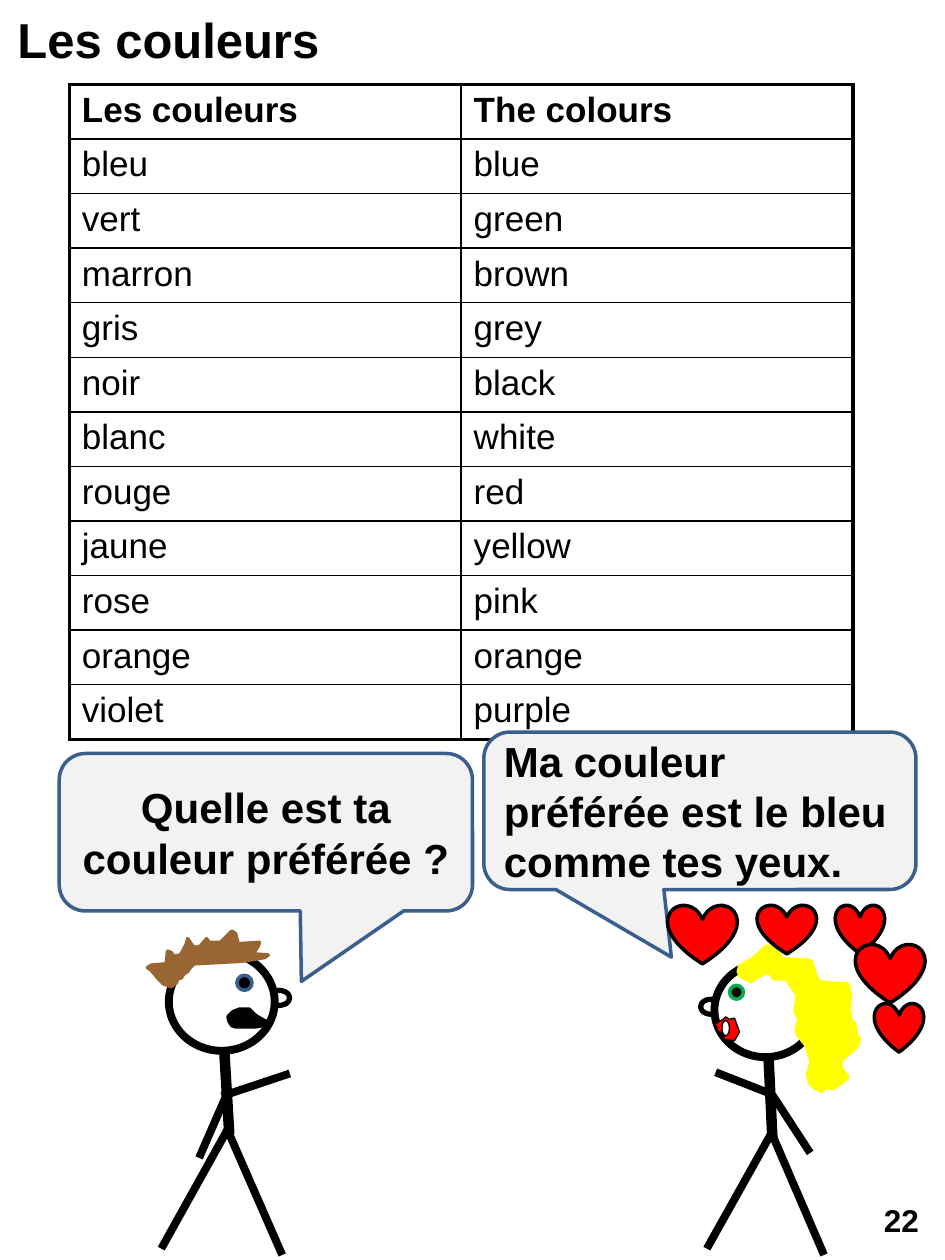
from lxml import etree
from pptx import Presentation
from pptx.dml.color import RGBColor
from pptx.enum.shapes import MSO_CONNECTOR, MSO_SHAPE
from pptx.enum.text import MSO_ANCHOR, PP_ALIGN
from pptx.oxml.ns import qn
from pptx.util import Pt

PX = 9144  # EMU in one px, 100 px to the inch
STRAIGHT = MSO_CONNECTOR.STRAIGHT
ELLIPSE = MSO_SHAPE.OVAL
HEART = MSO_SHAPE.HEART
CALLOUT = MSO_SHAPE.ROUNDED_RECTANGULAR_CALLOUT
ROUNDED = MSO_SHAPE.ROUNDED_RECTANGLE
LEFT, CENTER = PP_ALIGN.LEFT, PP_ALIGN.CENTER
TOP, MIDDLE = MSO_ANCHOR.TOP, MSO_ANCHOR.MIDDLE

COLORS = {
    "black": "000000", "white": "FFFFFF", "red": "FF0000", "yellow": "FFFF00",
    "brown": "996633", "green": "00B050", "blue": "3A5F8C", "bubble": "F2F2F2",
}


class SlideBuilder:
    font_format = {"name": "Arial", "bold": True}

    def __init__(self, slide):
        self.slide = slide
        self.shapes = slide.shapes

    def color(self, name):
        return RGBColor.from_string(COLORS[name])

    def paint(self, shape, fill=None, line=None, width=2):
        shape.shadow.inherit = False
        if fill:
            shape.fill.solid()
            shape.fill.fore_color.rgb = self.color(fill)
        else:
            shape.fill.background()
        if line:
            shape.line.color.rgb = self.color(line)
            shape.line.width = Pt(width)
        else:
            shape.line.fill.background()
        return shape

    def set_text(self, frame, text, size, align=LEFT, **changes):
        paragraph = frame.paragraphs[0]
        paragraph.alignment = align
        run = paragraph.add_run()
        run.text = text
        for name, value in {**self.font_format, "size": Pt(size), **changes}.items():
            setattr(run.font, name, value)
        run.font.color.rgb = self.color("black")

    def text(self, box, text, size):
        frame = self.shapes.add_textbox(*(n * PX for n in box)).text_frame
        frame.word_wrap = True
        self.set_text(frame, text, size)

    def shape(self, kind, box, fill=None, line=None, width=2):
        shape = self.shapes.add_shape(kind, *(n * PX for n in box))
        return self.paint(shape, fill, line, width)

    def label(self, shape, text, size, align):
        shape.text_frame.word_wrap = True
        shape.text_frame.vertical_anchor = MIDDLE
        self.set_text(shape.text_frame, text, size, align)

    def callout(self, box, tail, text, align):
        shape = self.shape(CALLOUT, box, "bubble", "blue")
        for index, value in enumerate(tail):
            shape.adjustments[index] = value
        self.label(shape, text, 24, align)

    def line(self, start, end, width):
        connector = self.shapes.add_connector(
            STRAIGHT, *(n * PX for n in start + end))
        connector.line.color.rgb = self.color("black")
        connector.line.width = Pt(width)
        properties = connector._element.spPr
        etree.SubElement(properties, qn("a:effectLst"))

    def outline(self, points, fill, line, width=2):
        builder = self.shapes.build_freeform(*points[0], scale=PX)
        builder.add_line_segments(points[1:], close=True)
        self.paint(builder.convert_to_shape(), fill, line, width)

    def border(self, cell, side, width):
        line = etree.SubElement(cell._tc.get_or_add_tcPr(), qn("a:ln" + side),
                                w=str(Pt(width)))
        fill = etree.SubElement(line, qn("a:solidFill"))
        etree.SubElement(fill, qn("a:srgbClr"), val=COLORS["black"])

    def table(self, box, rows):
        count, columns = len(rows), len(rows[0])
        table = self.shapes.add_table(count, columns, *(n * PX for n in box)).table
        table.first_row = table.horz_banding = False
        for i, row in enumerate(rows):
            for j, text in enumerate(row):
                cell = table.cell(i, j)
                edges = {"L": j == 0, "R": j == columns - 1,
                         "T": i == 0, "B": i == count - 1}
                for side, outer in edges.items():
                    self.border(cell, side, 2.25 if outer else 1)
                cell.fill.background()
                cell.vertical_anchor = TOP
                self.set_text(cell.text_frame, text, 20, bold=i == 0)

    def stick_figure(self, ear, head, spine, limbs, eye, iris):
        self.shape(ELLIPSE, ear, None, "black", 3)
        self.shape(ELLIPSE, head, "white", "black", 4.5)
        self.line(*spine, 6)
        for start, end in limbs:
            self.line(start, end, 4.5)
        self.shape(ELLIPSE, eye, "black", iris)


WORDS = [
    ("Les couleurs", "The colours"), ("bleu", "blue"), ("vert", "green"),
    ("marron", "brown"), ("gris", "grey"), ("noir", "black"),
    ("blanc", "white"), ("rouge", "red"), ("jaune", "yellow"),
    ("rose", "pink"), ("orange", "orange"), ("violet", "purple"),
]
BOY_MOUTH = [
    (213, 813), (215, 813), (214, 812), (208, 809), (203, 806), (198, 801),
    (195, 801), (190, 801), (185, 803), (183, 805), (181, 807), (182, 811),
    (184, 814), (187, 815), (203, 815),
]
BOY_HAIR = [
    (136, 783), (130, 781), (125, 776), (120, 770), (117, 768), (120, 766),
    (132, 765), (133, 755), (136, 756), (138, 759), (143, 758), (145, 755),
    (148, 749), (149, 745), (153, 751), (156, 752), (159, 751), (164, 745),
    (166, 748), (175, 748), (181, 742), (184, 739), (187, 741), (189, 749),
    (206, 748), (205, 751), (201, 757), (213, 758), (210, 760), (198, 762),
    (191, 763), (154, 765), (151, 768), (149, 771), (146, 773), (144, 776),
    (141, 777), (140, 780),
]
GIRL_LIPS = [
    (567, 813), (574, 809), (576, 807), (579, 809), (583, 808), (587, 819),
    (583, 826), (575, 825), (574, 820), (569, 818), (569, 815),
]
GIRL_HAIR = [
    (590, 768), (597, 761), (601, 758), (608, 751), (614, 752), (617, 753),
    (619, 758), (620, 761), (641, 762), (644, 763), (648, 776), (651, 779),
    (655, 780), (673, 781), (675, 790), (674, 798), (675, 809), (678, 812),
    (679, 815), (680, 822), (682, 825), (680, 831), (673, 837), (667, 842),
    (668, 849), (671, 852), (673, 855), (670, 858), (667, 860), (661, 864),
    (656, 863), (652, 866), (646, 863), (643, 860), (641, 853), (643, 846),
    (644, 843), (640, 830), (633, 821), (632, 817), (634, 809), (633, 806),
    (631, 803), (633, 790), (629, 784), (624, 777), (614, 777), (612, 773),
    (608, 772), (602, 775), (596, 779), (588, 775), (586, 771), (587, 767),
    (595, 762),
]
HEARTS = [
    (663, 718, 39, 39), (679, 749, 55, 47), (601, 718, 47, 39),
    (530, 718, 55, 47), (694, 796, 39, 39),
]


def main():
    presentation = Presentation()
    presentation.slide_width, presentation.slide_height = 750 * PX, 1000 * PX
    page = SlideBuilder(presentation.slides.add_slide(presentation.slide_layouts[6]))

    # Vocabulary table
    page.table((55, 67, 622, 520), WORDS)

    # Boy
    page.stick_figure(
        ear=(212, 786, 18, 12), head=(134, 756, 84, 78),
        spine=((178, 834), (182, 900)),
        limbs=[((182, 894), (128, 991)), ((182, 900), (224, 996)),
               ((176, 870), (230, 852)), ((182, 864), (158, 919))],
        eye=(188, 774, 12, 12), iris="blue")
    page.outline(BOY_MOUTH, "black", "black")
    page.outline(BOY_HAIR, "brown", "brown")

    # Girl
    page.stick_figure(
        ear=(556, 793, 17, 12), head=(567, 764, 81, 75),
        spine=((610, 840), (613, 903)),
        limbs=[((613, 898), (561, 991)), ((614, 903), (654, 996)),
               ((614, 869), (568, 851)), ((613, 869), (643, 915))],
        eye=(579, 782, 11, 11), iris="green")
    page.outline(GIRL_LIPS, "red", "black", 0.75)
    page.shape(ELLIPSE, (573, 810, 6, 12), "white", "black", 0.75)
    page.outline(GIRL_HAIR, "yellow", "yellow")

    # Dialogue
    page.callout((47, 598, 328, 125), (0.086, 0.947),
                 "Quelle est ta couleur préférée ?", CENTER)
    page.callout((384, 581, 343, 125), (-0.066, 0.929),
                 "Ma couleur préférée est le bleu comme tes yeux.", LEFT)

    # Hearts
    for box in HEARTS:
        page.shape(HEART, box, "red", "black")

    # Title and page number
    page.text((4, 3, 866, 57), "Les couleurs", 28)
    page.label(page.shape(ROUNDED, (688, 945, 55, 47)), "22", 18, CENTER)

    presentation.save("out.pptx")


if __name__ == "__main__":
    main()
